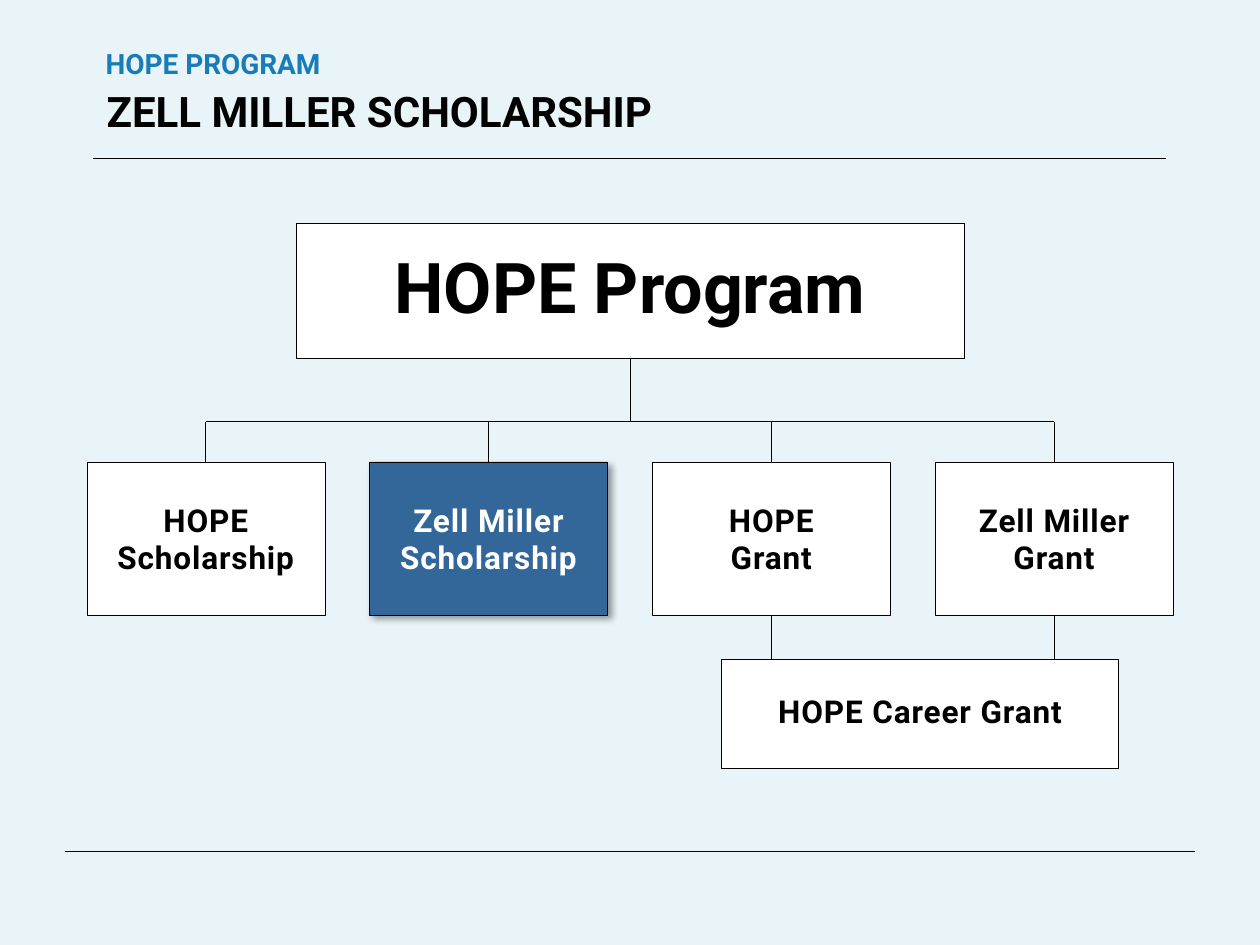
from lxml import etree
from pptx import Presentation
from pptx.dml.color import RGBColor
from pptx.enum import shapes, text
from pptx.oxml.ns import qn
from pptx.util import Cm, Pt

# Content
KICKER = "HOPE PROGRAM"
TITLE = "ZELL MILLER SCHOLARSHIP"
ROOT = "HOPE Program"
AWARDS = [["HOPE", "Scholarship"], ["Zell Miller", "Scholarship"],
          ["HOPE", "Grant"], ["Zell Miller", "Grant"]]
CURRENT = 1
CAREER = "HOPE Career Grant"
CAREER_PARENTS = [2, 3]

# Geometry in cm: left, top, width, height
KICKER_BOX = (1.88, 0.89, 21.59, 1.07)
TITLE_BOX = (1.9, 1.7, 21.59, 1.35)
ROOT_BOX = (5.97, 4.5, 13.46, 2.72)
CAREER_BOX = (14.55, 13.29, 8, 2.19)
AWARD_LEFT, AWARD_TOP, AWARD_W, AWARD_H, PITCH = 1.75, 9.31, 4.8, 3.09, 5.7
BUS_Y = 8.5
RULES = [(1.88, 23.5, 3.2), (1.32, 24.08, 17.17)]


def color(value):
    return RGBColor.from_string(value)


def write(tf, lines, size, ink="000000", align=text.PP_ALIGN.CENTER,
          anchor=text.MSO_ANCHOR.MIDDLE, inset=0.03, spacing=1.0, tracking=0):
    tf.word_wrap = True
    tf.auto_size = text.MSO_AUTO_SIZE.NONE
    tf.vertical_anchor = anchor
    tf.margin_left = tf.margin_right = Cm(inset)
    tf.margin_top = tf.margin_bottom = Cm(min(inset, 0.13))
    for i, line in enumerate(lines):
        p = tf.add_paragraph() if i else tf.paragraphs[0]
        p.alignment, p.line_spacing, p.space_before = align, spacing, Pt(0)
        r = p.add_run()
        r.text = line
        r.font.name, r.font.size, r.font.bold = "Roboto", Pt(size), True
        r.font.color.rgb = color(ink)
        if tracking:
            r._r.get_or_add_rPr().set("spc", str(int(tracking * 100)))


def heading(holder, box, line, size, ink):
    holder.left, holder.top, holder.width, holder.height = map(Cm, box)
    write(holder.text_frame, [line], size, ink, text.PP_ALIGN.LEFT,
          text.MSO_ANCHOR.TOP, inset=0.25, spacing=0.9)


def add_box(s, box, lines, size=18, fill="FFFFFF", **fmt):
    sp = s.shapes.add_shape(shapes.MSO_SHAPE.RECTANGLE, *map(Cm, box))
    sp.shadow.inherit = False
    sp.fill.solid()
    sp.fill.fore_color.rgb = color(fill)
    sp.line.color.rgb = color("000000")
    sp.line.width = Pt(0.25)
    write(sp.text_frame, lines, size, **fmt)
    return sp


def add_line(s, x1, y1, x2, y2):
    line = s.shapes.add_connector(shapes.MSO_CONNECTOR.STRAIGHT,
                                  *map(Cm, (x1, y1, x2, y2)))
    line.line.color.rgb = color("000000")
    line.line.width = Pt(0.5)
    etree.SubElement(line._element.spPr, qn("a:effectLst"))
    return line


def add_shadow(sp):
    effects = sp._element.spPr.find(qn("a:effectLst"))
    shadow = etree.SubElement(effects, qn("a:outerShdw"), blurRad=str(Pt(4)),
                              dist=str(Pt(3)), dir=str(45 * 60000),
                              algn="tl", rotWithShape="0")
    black = etree.SubElement(shadow, qn("a:srgbClr"), val="000000")
    etree.SubElement(black, qn("a:alpha"), val="40000")


prs = Presentation()
prs.slide_width, prs.slide_height = Cm(25.4), Cm(19.05)
s = prs.slides.add_slide(prs.slide_layouts[2])
s.background.fill.solid()
s.background.fill.fore_color.rgb = color("E9F4F8")

# Headings and rules
for left, right, y in RULES:
    add_line(s, left, y, right, y)
heading(s.placeholders[1], KICKER_BOX, KICKER, 16, "187CB8")
heading(s.shapes.title, TITLE_BOX, TITLE, 24, "000000")

# Boxes
root = add_box(s, ROOT_BOX, [ROOT], size=40, spacing=0.9)
awards = []
for i, lines in enumerate(AWARDS):
    fill, ink = ("336699", "FFFFFF") if i == CURRENT else ("FFFFFF", "000000")
    box = (AWARD_LEFT + i * PITCH, AWARD_TOP, AWARD_W, AWARD_H)
    awards.append(add_box(s, box, lines, fill=fill, ink=ink, tracking=0.5))
add_shadow(awards[CURRENT])
add_box(s, CAREER_BOX, [CAREER], spacing=0.9, tracking=0.5)

# Connecting lines
centers = [AWARD_LEFT + AWARD_W / 2 + i * PITCH for i in range(len(AWARDS))]
middle = ROOT_BOX[0] + ROOT_BOX[2] / 2
trunk = add_line(s, middle, ROOT_BOX[1] + ROOT_BOX[3], middle, BUS_Y)
trunk.begin_connect(root, 2)
add_line(s, centers[0], BUS_Y, centers[-1], BUS_Y)
for x, award in zip(centers, awards):
    add_line(s, x, BUS_Y, x, AWARD_TOP).end_connect(award, 0)
for i in CAREER_PARENTS:
    link = add_line(s, centers[i], AWARD_TOP + AWARD_H, centers[i], CAREER_BOX[1])
    link.begin_connect(awards[i], 2)

prs.save("out.pptx")
